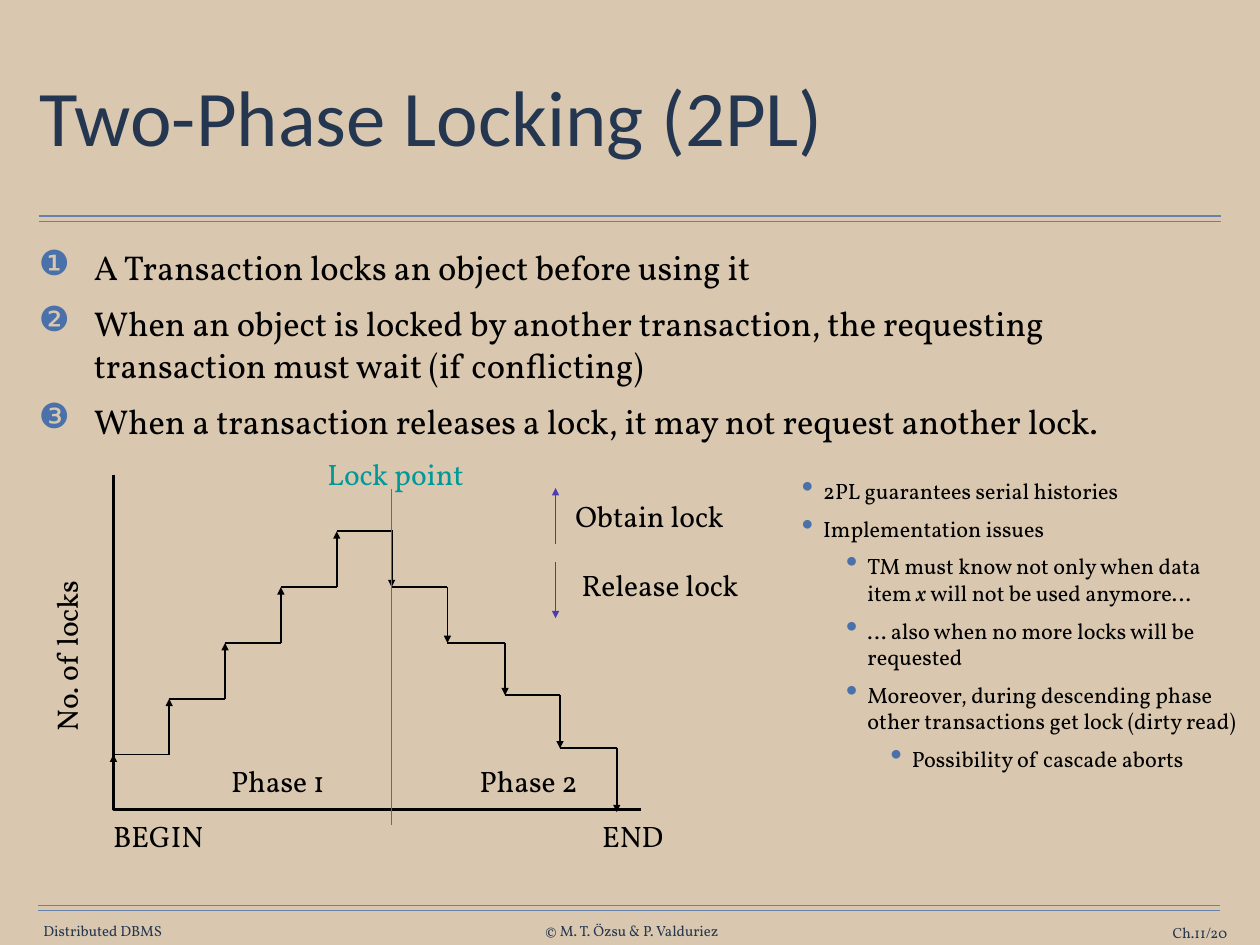
from lxml import etree
from pptx import Presentation
from pptx.dml.color import RGBColor
from pptx.enum.shapes import MSO_CONNECTOR
from pptx.enum.text import MSO_ANCHOR, MSO_AUTO_SIZE, PP_ALIGN
from pptx.oxml.ns import qn
from pptx.util import Pt

STRAIGHT = MSO_CONNECTOR.STRAIGHT
TOP, MIDDLE = MSO_ANCHOR.TOP, MSO_ANCHOR.MIDDLE
LEFT, CENTER, RIGHT = PP_ALIGN.LEFT, PP_ALIGN.CENTER, PP_ALIGN.RIGHT
GROW, FIXED = MSO_AUTO_SIZE.SHAPE_TO_FIT_TEXT, MSO_AUTO_SIZE.NONE

EMU_PER_PX = 9144  # 100 px to the inch
COLORS = {
    "sand": "D9C8AF", "rule": "6682AA", "navy": "253750", "footer": "263750",
    "black": "000000", "bullet": "4A71A9", "teal": "009999", "violet": "4C3BB1",
}


def px(length):
    return int(length * EMU_PER_PX)


def rgb(name):
    return RGBColor.from_string(COLORS[name])


class SlideBuilder:
    """Holds the text style and the slide being built."""

    body_font = "Vollkorn"
    title_font = "Calibri"

    def __init__(self, slide):
        self.slide = slide
        slide.background.fill.solid()
        slide.background.fill.fore_color.rgb = rgb("sand")

    def box(self, left, top, width, height, inset=(6, 6), anchor=TOP, wrap=True, size=FIXED):
        shape = self.slide.shapes.add_textbox(px(left), px(top), px(width), px(height))
        frame = shape.text_frame
        frame.word_wrap, frame.auto_size, frame.vertical_anchor = wrap, size, anchor
        frame.margin_left = frame.margin_right = px(inset[0])
        frame.margin_top = frame.margin_bottom = px(inset[1])
        return shape

    def add_text(self, paragraph, text, size, color="black", font=None, align=LEFT):
        """Fill a paragraph; words between asterisks are italic."""
        paragraph.alignment = align
        for index, part in enumerate(text.split("*")):
            run = paragraph.add_run()
            run.text = part
            run.font.size = Pt(size)
            run.font.name = font or self.body_font
            run.font.color.rgb = rgb(color)
            if index % 2:
                run.font.italic = True

    def title(self, text, *area):
        paragraph = self.box(*area, anchor=MIDDLE).text_frame.paragraphs[0]
        paragraph.line_spacing = 0.9
        self.add_text(paragraph, text, 64, "navy", self.title_font)

    def footer(self, text, left, top, width, align=CENTER):
        shape = self.box(left, top, width, 20, (0, 0), MIDDLE, align == RIGHT, GROW)
        self.add_text(shape.text_frame.paragraphs[0], text, 12, "footer", align=align)

    def label(self, text, left, top, width, color="black", rotation=0):
        shape = self.box(left, top, width, 54, (14, 7), wrap=False, size=GROW)
        shape.rotation = rotation
        self.add_text(shape.text_frame.paragraphs[0], text, 24, color, align=CENTER)

    def bullets(self, items, area, size, space, hanging, level_step=0, bullet_percent=100):
        """Add a list of (level, bullet, text) items."""
        frame = self.box(*area).text_frame
        for index, (level, bullet, text) in enumerate(items):
            paragraph = frame.add_paragraph() if index else frame.paragraphs[0]
            paragraph.level = level
            properties = paragraph._p.get_or_add_pPr()
            properties.set("marL", str(px(hanging + level * level_step)))
            properties.set("indent", str(-px(hanging)))
            color = etree.SubElement(properties, qn("a:buClr"))
            etree.SubElement(color, qn("a:srgbClr"), val=COLORS["bullet"])
            etree.SubElement(properties, qn("a:buSzPct"), val=str(bullet_percent * 1000))
            etree.SubElement(properties, qn("a:buChar"), char=bullet)
            if index:
                paragraph.space_before = Pt(space)
            self.add_text(paragraph, text, size)

    def line(self, start, end, color="black", width=1.5, arrow=False):
        connector = self.slide.shapes.add_connector(
            STRAIGHT, px(start[0]), px(start[1]), px(end[0]), px(end[1]))
        connector.line.color.rgb = rgb(color)
        connector.line.width = Pt(width)
        if arrow:
            etree.SubElement(connector.line._get_or_add_ln(), qn("a:tailEnd"), type="triangle")
        etree.SubElement(connector._element.spPr, qn("a:effectLst"))

    def outline(self, points, width):
        start, *others = [(px(x), px(y)) for x, y in points]
        builder = self.slide.shapes.build_freeform(*start)
        builder.add_line_segments(others, close=False)
        shape = builder.convert_to_shape()
        shape.shadow.inherit = False
        shape.fill.background()
        shape.line.color.rgb = rgb("black")
        shape.line.width = Pt(width)


def main():
    presentation = Presentation()
    presentation.slide_width, presentation.slide_height = px(1422), px(1067)
    page = SlideBuilder(presentation.slides.add_slide(presentation.slide_layouts[6]))

    # Double rules and footer
    for left, top in ((44, 244), (43, 1022)):
        for y in (top, top + 6):
            page.line((left, y), (left + 1334, y), "rule", 1)
    page.footer("Distributed DBMS", 47, 1041, 138)
    page.footer("© M. T. Özsu & P. Valduriez", 609, 1041, 208)
    page.footer("Ch.11/20", 1231, 1043, 154, RIGHT)

    # Title and locking rules
    page.title("Two-Phase Locking (2PL)", 39, 49, 1344, 176)
    page.bullets([
        (0, "❶", "A Transaction locks an object before using it"),
        (0, "❷", "When an object is locked by another transaction, the requesting "
                 "transaction must wait (if conflicting)"),
        (0, "❸", "When a transaction releases a lock, it may not request another lock."),
    ], (38, 272, 1344, 740), size=28, space=12, hanging=62)

    # Chart axes
    page.outline([(128, 536), (128, 914), (724, 914)], 2)

    # Growing phase: equal steps up to the lock point
    step, origin_x, origin_y = 63, 128, 915
    for index in range(5):
        x, y = origin_x + index * step, origin_y - index * step
        page.line((x, y), (x, y - step), arrow=True)
        page.line((x, y - step), (x + step, y - step))

    # Shrinking phase: steps down to the axis
    drop_x = [442, 505, 570, 632, 696]
    levels = [600, 663, 726, 785, 845, 917]
    for x, upper, lower in zip(drop_x, levels, levels[1:]):
        page.line((x, upper), (x, lower), arrow=True)
    for x, next_x, level in zip(drop_x, drop_x[1:], levels[1:]):
        page.line((x, level), (next_x, level))

    # Lock point and legend arrows
    page.line((442, 552), (442, 931), "teal", 1)
    page.line((627, 614), (627, 551), "violet", 1, arrow=True)
    page.line((627, 635), (627, 698), "violet", 1, arrow=True)

    # Chart labels
    page.label("Obtain lock", 631, 555, 204)
    page.label("Release lock", 638, 633, 214)
    page.label("Lock point", 351, 508, 191, "teal")
    page.label("Phase 1", 243, 854, 141)
    page.label("Phase 2", 526, 854, 141)
    page.label("BEGIN", 111, 917, 135)
    page.label("END", 663, 917, 102)
    page.label("No. of locks", -30, 714, 209, rotation=270)

    # Notes beside the chart
    notes = [
        (0, "2PL guarantees serial histories"),
        (0, "Implementation issues"),
        (1, "TM must know not only when data item *x* will not be used anymore…"),
        (1, "… also when no more locks will be requested"),
        (1, "Moreover, during descending phase other transactions get lock (dirty read)"),
        (2, "Possibility of cascade aborts"),
    ]
    page.bullets([(level, "•", text) for level, text in notes], (899, 533, 502, 445),
                 size=18, space=9, hanging=24, level_step=50, bullet_percent=150)

    presentation.save("out.pptx")


if __name__ == "__main__":
    main()
